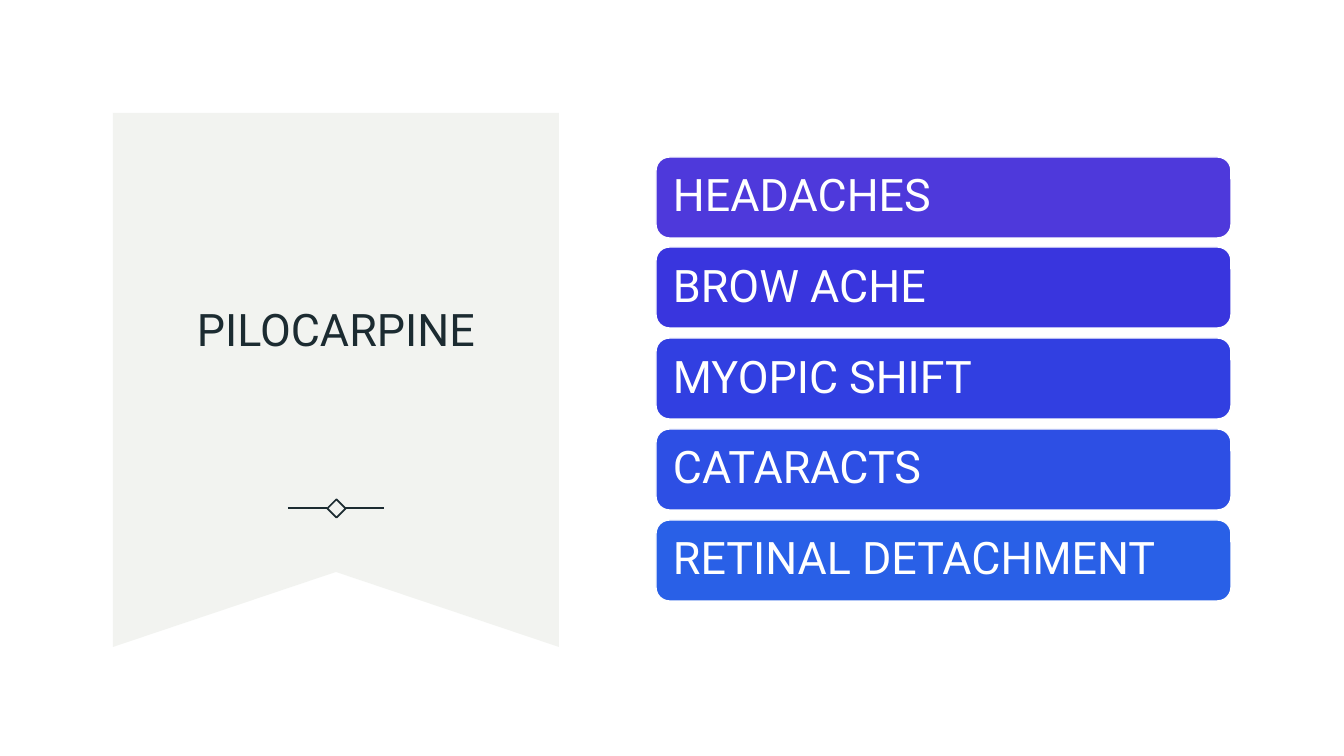
"""Builds a slide listing the side effects of pilocarpine beside a ribbon title."""
from pptx import Presentation
from pptx.dml.color import RGBColor
from pptx.enum.shapes import MSO_CONNECTOR as Conn, MSO_SHAPE as Shape
from pptx.enum.text import MSO_ANCHOR as Anchor, PP_ALIGN as Align
from pptx.oxml.ns import qn
from pptx.util import Pt
from lxml.etree import SubElement

PX = 914400 / 100.8
INK, PAPER, WHITE = "1C2B31", "F2F3F0", "FFFFFF"


def rgb(code):
    return RGBColor.from_string(code)


def write(shape, text, color=WHITE, align=Align.LEFT, space=0.9, pad=13):
    frame = shape.text_frame
    frame.word_wrap = True
    frame.vertical_anchor = Anchor.MIDDLE
    frame.margin_left = frame.margin_right = round(pad * PX)
    frame.margin_top = frame.margin_bottom = round(pad * PX)
    para = frame.paragraphs[0]
    para.text = text
    para.alignment = align
    para.line_spacing = space
    para.space_before = para.space_after = Pt(0)
    para.font.name = "Roboto"
    para.font.size = Pt(32)
    para.font.color.rgb = rgb(color)


deck = Presentation()
deck.slide_width, deck.slide_height = round(1344 * PX), round(756 * PX)
slide = deck.slides.add_slide(deck.slide_layouts[5])
slide.background.fill.solid()
slide.background.fill.fore_color.rgb = rgb(WHITE)
shapes = slide.shapes
title = shapes.title

pen = shapes.build_freeform(113, 113, scale=PX)
pen.add_line_segments([(559, 113), (559, 647), (336, 572), (113, 647)])
ribbon = pen.convert_to_shape()
ribbon.shadow.inherit = False
ribbon.fill.solid()
ribbon.fill.fore_color.rgb = rgb(PAPER)
ribbon.line.fill.background()

title.left, title.top, title.width, title.height = [
    round(n * PX) for n in (157, 182, 358, 287)]
write(title, "PILOCARPINE", color=INK, align=Align.CENTER, space=1.1, pad=5)
ribbon._element.addnext(title._element)

gem = shapes.add_shape(Shape.RECTANGLE, *[round(n * PX) for n in (330, 502, 13, 13)])
gem.rotation = 45
gem.shadow.inherit = False
gem.fill.background()
gem.line.color.rgb = rgb(INK)
gem.line.width = Pt(1.25)

for start, end in ((288, 327), (345, 384)):
    rule = shapes.add_connector(
        Conn.STRAIGHT, *[round(n * PX) for n in (start, 508, end, 508)])
    rule.line.color.rgb = rgb(INK)
    rule.line.width = Pt(1.25)
    SubElement(rule._element.spPr, qn("a:effectLst"))

effects = [
    ("HEADACHES", "4E39DB"),
    ("BROW ACHE", "3935DE"),
    ("MYOPIC SHIFT", "313FE1"),
    ("CATARACTS", "2D4FE4"),
    ("RETINAL DETACHMENT", "2960E7"),
]
for row, (name, color) in enumerate(effects):
    top = 157 + row * 363 // 4
    bar = shapes.add_shape(
        Shape.ROUNDED_RECTANGLE, *[round(n * PX) for n in (656, top, 575, 81)])
    bar.shadow.inherit = False
    bar.fill.solid()
    bar.fill.fore_color.rgb = rgb(color)
    bar.line.color.rgb = rgb(WHITE)
    bar.line.width = Pt(1)
    write(bar, name)

deck.save("out.pptx")
